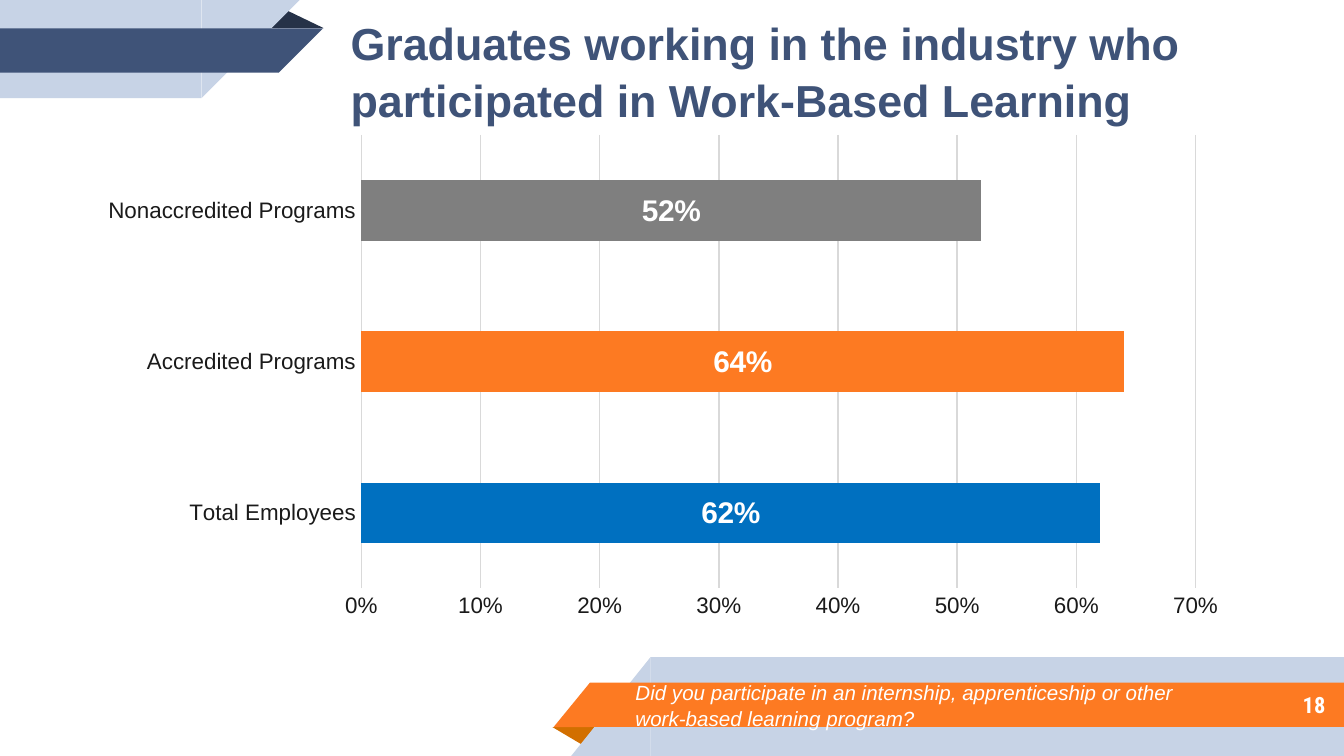
from dataclasses import dataclass

from lxml import etree
from pptx import Presentation
from pptx.chart.data import CategoryChartData
from pptx.dml.color import RGBColor
from pptx.enum.chart import XL_CHART_TYPE as ChartType, XL_LABEL_POSITION as LabelPosition
from pptx.enum.chart import XL_TICK_MARK as TickMark
from pptx.enum.shapes import MSO_SHAPE as Preset
from pptx.enum.text import MSO_ANCHOR as Anchor, PP_ALIGN as Align
from pptx.oxml import parse_xml
from pptx.oxml.ns import nsdecls, qn
from pptx.util import Inches, Pt

COLUMNS, ROWS = 100, 56.25
CELL = Inches(0.1)


@dataclass(frozen=True)
class Theme:
    navy: str = "3F5378"
    dark: str = "263248"
    pale: str = "C7D3E6"
    orange: str = "FD7A22"
    rust: str = "D26F00"
    blue: str = "0070C0"
    gray: str = "7F7F7F"
    grid: str = "D9D9D9"
    ink: str = "1A1A1A"
    white: str = "FFFFFF"
    font: str = "Arial"
    number_font: str = "Roboto Condensed"
    title: float = 24
    value: float = 16
    small: float = 12
    note: float = 11


THEME = Theme()


@dataclass(frozen=True)
class Box:
    """A place on the grid, in columns and rows."""
    left: float
    top: float
    width: float
    height: float

    def lengths(self) -> list[int]:
        return [round(n * CELL) for n in (self.left, self.top, self.width, self.height)]


@dataclass(frozen=True)
class Band:
    """A ribbon: a straight body with a slanted end, at the right if hanging from the top."""
    body: Box
    slant: float
    color: str
    hanging: bool = False


@dataclass(frozen=True)
class Label:
    box: Box
    text: str
    size: float
    color: str
    font: str = THEME.font
    bold: bool = False
    italic: bool = False
    align: Align = Align.LEFT
    spacing: float = 1.05


FOOTER_FOLD = Box(41.1, 54.1, 3.5, 1.4)
FOOTER_BANDS = (
    Band(Box(48.4, 48.9, COLUMNS - 48.4, ROWS - 48.9), 5.9, THEME.pale),
    Band(Box(43.9, 50.8, COLUMNS - 43.9, 3.3), 2.7, THEME.orange),
)
HEADER_FOLD = Box(19.8, 0.7, 4.3, 1.4)
HEADER_BANDS = (
    Band(Box(0, 0, 15, 7.3), 7.3, THEME.pale, hanging=True),
    Band(Box(0, 2.1, 20.75, 3.3), 3.3, THEME.navy, hanging=True),
)
LABELS = (
    Label(Box(46.3, 50.7, 43.6, 3.5),
          "Did you participate in an internship, apprenticeship or other work-based learning program?",
          THEME.note, THEME.white, italic=True),
    Label(Box(83.3, 50.7, 16.3, 3.5), "18", THEME.small, THEME.white,
          THEME.number_font, bold=True, align=Align.RIGHT, spacing=1),
    Label(Box(25.1, 1, 64.8, 8.4),
          "Graduates working in the industry who participated in Work-Based Learning",
          THEME.title, THEME.navy, bold=True),
)
CHART_BOX = Box(6.2, 9.3, 86.2, 37.5)
PLOT_SHARES = {"x": 0.24, "y": 0.02, "w": 0.72, "h": 0.9}
BARS = (
    ("Total Employees", 0.62, THEME.blue),
    ("Accredited Programs", 0.64, THEME.orange),
    ("Nonaccredited Programs", 0.52, THEME.gray),
)


def set_values(target, values: dict) -> None:
    for name, value in values.items():
        setattr(target, name, value)


def set_font(font, size: float, color: str, name: str = THEME.font, **values) -> None:
    set_values(font, {"size": Pt(size), "name": name, **values})
    font.color.rgb = RGBColor.from_string(color)


def paint(fill, color: str) -> None:
    fill.solid()
    fill.fore_color.rgb = RGBColor.from_string(color)


def draw_shape(slide, preset: Preset, box: Box, color: str,
               rotation: float = 0, mirrored: bool = False):
    shape = slide.shapes.add_shape(preset, *box.lengths())
    shape.shadow.inherit = False
    shape.rotation = rotation
    paint(shape.fill, color)
    shape.line.fill.background()
    if mirrored:
        shape._element.spPr.find(qn("a:xfrm")).set("flipH", "1")
    return shape


def draw_fold(slide, box: Box, color: str, rotation: float = 0) -> None:
    draw_shape(slide, Preset.ISOSCELES_TRIANGLE, box, color, rotation).adjustments[0] = 0.324


def draw_band(slide, band: Band) -> None:
    body = band.body
    end_left = body.left + body.width if band.hanging else body.left - band.slant
    end = Box(end_left, body.top, band.slant, body.height)
    rotation = 180 if band.hanging else 0
    for preset, box in ((Preset.RECTANGLE, body), (Preset.RIGHT_TRIANGLE, end)):
        draw_shape(slide, preset, box, band.color, rotation, mirrored=True)


def draw_label(slide, label: Label) -> None:
    frame = slide.shapes.add_textbox(*label.box.lengths()).text_frame
    margins = {f"margin_{side}": CELL for side in ("left", "top", "right", "bottom")}
    set_values(frame, {"word_wrap": True, "vertical_anchor": Anchor.MIDDLE, **margins})
    paragraph = frame.paragraphs[0]
    set_values(paragraph, {"alignment": label.align, "line_spacing": label.spacing})
    run = paragraph.add_run()
    run.text = label.text
    set_font(run.font, label.size, label.color, label.font,
             bold=label.bold, italic=label.italic)


def place_plot(chart) -> None:
    """Fix the inner plot area as shares of the chart."""
    plot_area = chart._chartSpace.chart.plotArea
    for layout in plot_area.findall(qn("c:layout")):
        plot_area.remove(layout)
    layout = parse_xml(f"<c:layout {nsdecls('c')}><c:manualLayout/></c:layout>")
    settings = {"layoutTarget": "inner", "xMode": "edge", "yMode": "edge", **PLOT_SHARES}
    for name, value in settings.items():
        etree.SubElement(layout[0], qn(f"c:{name}")).set("val", str(value))
    plot_area.insert(0, layout)


def draw_chart(slide) -> None:
    data = CategoryChartData(number_format="0%")
    data.categories = [name for name, _, _ in BARS]
    data.add_series("Series 1", [value for _, value, _ in BARS])
    chart = slide.shapes.add_chart(ChartType.BAR_STACKED, *CHART_BOX.lengths(), data).chart
    set_values(chart, {"has_legend": False, "has_title": False})
    set_font(chart.font, THEME.small, THEME.ink)
    place_plot(chart)

    for axis in (chart.category_axis, chart.value_axis):
        set_values(axis, {"major_tick_mark": TickMark.NONE, "minor_tick_mark": TickMark.NONE})
        set_font(axis.tick_labels.font, THEME.small, THEME.ink)
    values = chart.value_axis
    set_values(values, {"minimum_scale": 0, "maximum_scale": 0.7, "major_unit": 0.1,
                        "has_major_gridlines": True})
    set_values(values.tick_labels, {"number_format": "0%", "number_format_is_linked": False})
    values.format.line.fill.background()
    for line in (chart.category_axis.format.line, values.major_gridlines.format.line):
        line.width = Pt(0.75)
        paint(line.fill, THEME.grid)

    plot = chart.plots[0]
    set_values(plot, {"gap_width": 150, "overlap": 100, "vary_by_categories": False})
    series = plot.series[0]
    paint(series.format.fill, THEME.gray)
    for index, (_, _, color) in enumerate(BARS):
        paint(series.points[index].format.fill, color)
    labels = series.data_labels
    set_values(labels, {"show_value": True, "number_format": "0%",
                        "number_format_is_linked": False, "position": LabelPosition.CENTER})
    set_font(labels.font, THEME.value, THEME.white, bold=True)


def main() -> None:
    presentation = Presentation()
    set_values(presentation, {"slide_width": round(COLUMNS * CELL),
                              "slide_height": round(ROWS * CELL)})
    slide = presentation.slides.add_slide(presentation.slide_layouts[6])
    draw_fold(slide, FOOTER_FOLD, THEME.rust, rotation=180)
    draw_fold(slide, HEADER_FOLD, THEME.dark)
    for band in FOOTER_BANDS + HEADER_BANDS:
        draw_band(slide, band)
    for label in LABELS:
        draw_label(slide, label)
    draw_chart(slide)
    presentation.save("out.pptx")


if __name__ == "__main__":
    main()
